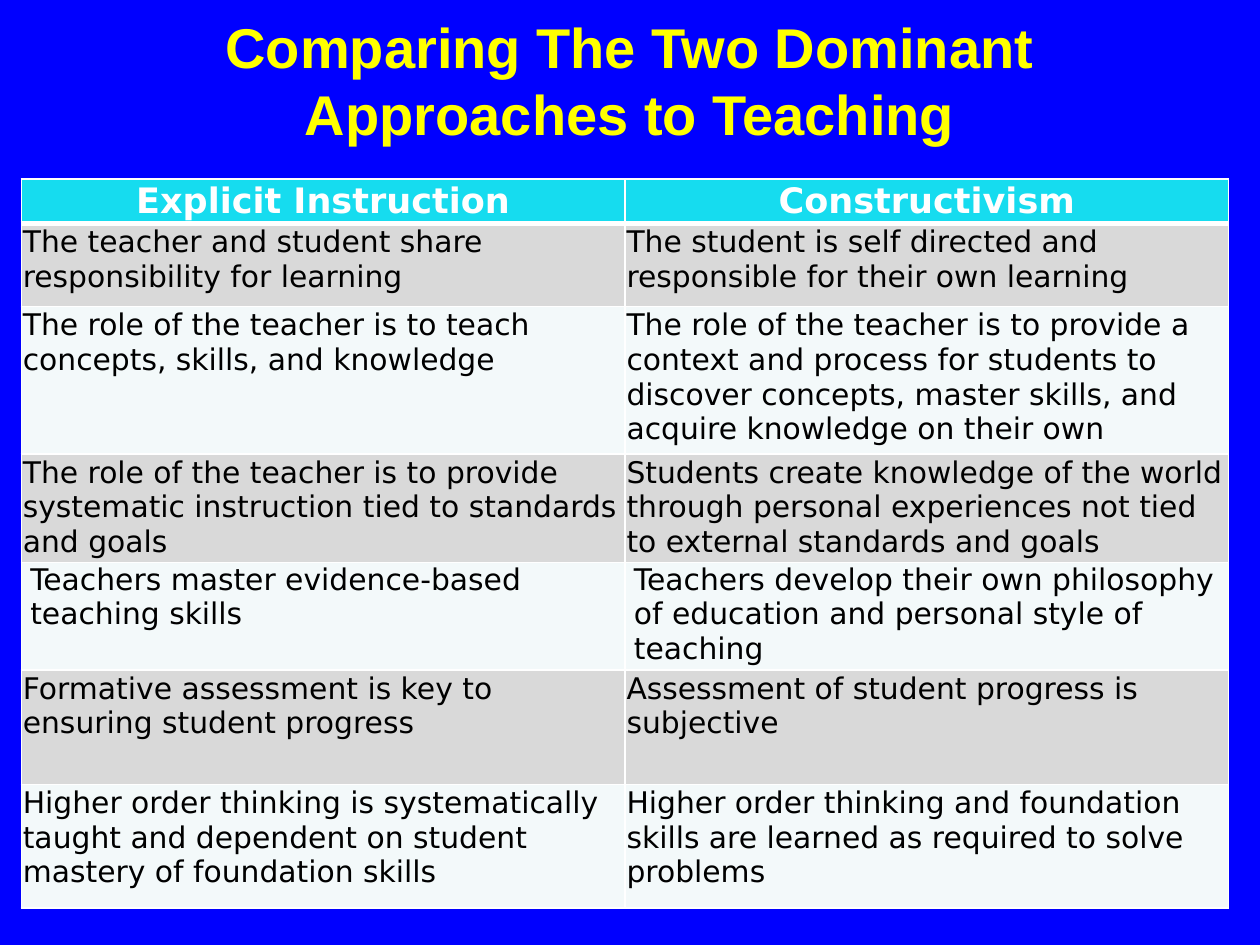
from dataclasses import dataclass

from lxml.etree import SubElement
from pptx import Presentation
from pptx.dml.color import RGBColor as RGB
from pptx.enum.text import MSO_ANCHOR as Anchor, PP_ALIGN as Align
from pptx.oxml.ns import qn
from pptx.util import Cm, Pt


@dataclass(frozen=True)
class Theme:
    back: str = "0000FF"
    title: str = "FFFF00"
    head: str = "16DCEF"
    white: str = "FFFFFF"
    text: str = "000000"
    gray: str = "D9D9D9"
    pale: str = "F3F9FA"
    title_font: str = "Arial"
    font: str = "DejaVu Sans"
    title_size: int = 32
    head_size: int = 20
    size: int = 17
    thin: int = 1
    thick: int = 3


THEME = Theme()
TITLE = "Comparing The Two Dominant Approaches to Teaching"
HEADS = ("Explicit Instruction", "Constructivism")

# Row height in cm, side margin in cm, text on each side
ROWS = [
    (1.68, 0.03, "The teacher and student share responsibility for learning",
     "The student is self directed and responsible for their own learning"),
    (2.97, 0.03, "The role of the teacher is to teach concepts, skills, and knowledge",
     "The role of the teacher is to provide a context and process for students "
     "to discover concepts, master skills, and acquire knowledge on their own"),
    (2.18, 0.03, "The role of the teacher is to provide systematic instruction "
     "tied to standards and goals",
     "Students create knowledge of the world through personal experiences "
     "not tied to external standards and goals"),
    (2.16, 0.18, "Teachers master evidence-based teaching skills",
     "Teachers develop their own philosophy of education and personal style of teaching"),
    (2.31, 0.03, "Formative assessment is key to ensuring student progress",
     "Assessment of student progress is subjective"),
    (2.49, 0.03, "Higher order thinking is systematically taught and dependent on "
     "student mastery of foundation skills",
     "Higher order thinking and foundation skills are learned as required "
     "to solve problems"),
]


def style(para, font, size, color, bold=False, align=Align.LEFT):
    para.alignment = align
    face = para.font
    face.name, face.size, face.bold = font, Pt(size), bold
    face.color.rgb = RGB.from_string(color)


def add_title(slide):
    box = slide.shapes.add_textbox(Cm(1.9), Cm(0.43), Cm(21.6), Cm(2.34))
    frame = box.text_frame
    frame.word_wrap = True
    frame.vertical_anchor = Anchor.MIDDLE
    frame.text = TITLE
    style(frame.paragraphs[0], THEME.title_font, THEME.title_size,
          THEME.title, True, Align.CENTER)


def add_edges(cell, top, bottom):
    props = cell._tc.get_or_add_tcPr()
    widths = {"lnL": THEME.thin, "lnR": THEME.thin, "lnT": top, "lnB": bottom}
    for tag, width in widths.items():
        line = SubElement(props, qn(f"a:{tag}"), w=str(Pt(width)))
        fill = SubElement(line, qn("a:solidFill"))
        SubElement(fill, qn("a:srgbClr"), val=THEME.white)


def fill_cell(cell, text, color, side, top, bottom):
    cell.text = text
    cell.margin_left = cell.margin_right = Cm(side)
    # Indented rows sit flush with the top edge
    cell.margin_top = Cm(0.03 if side < 0.1 else 0)
    cell.margin_bottom = Cm(0)
    add_edges(cell, top, bottom)
    cell.fill.solid()
    cell.fill.fore_color.rgb = RGB.from_string(color)


def add_grid(slide):
    rows = [(0.89, 0.03, *HEADS)] + ROWS
    high = sum(row[0] for row in rows)
    grid = slide.shapes.add_table(len(rows), len(HEADS), Cm(0.43), Cm(3.61),
                                  Cm(24.34), Cm(high)).table
    grid.first_row = grid.horz_banding = False
    for r, (tall, side, *texts) in enumerate(rows):
        grid.rows[r].height = Cm(tall)
        color = THEME.head if r == 0 else THEME.gray if r % 2 else THEME.pale
        # A thick rule parts the heading from the body
        top = THEME.thick if r == 1 else THEME.thin
        bottom = THEME.thick if r == 0 else THEME.thin
        for c, text in enumerate(texts):
            cell = grid.cell(r, c)
            fill_cell(cell, text, color, side, top, bottom)
            para = cell.text_frame.paragraphs[0]
            if r == 0:
                style(para, THEME.font, THEME.head_size, THEME.white, True, Align.CENTER)
            else:
                style(para, THEME.font, THEME.size, THEME.text)


def main():
    deck = Presentation()
    deck.slide_width, deck.slide_height = Cm(25.4), Cm(19.05)
    slide = deck.slides.add_slide(deck.slide_layouts[6])
    back = slide.background.fill
    back.solid()
    back.fore_color.rgb = RGB.from_string(THEME.back)
    add_title(slide)
    add_grid(slide)
    deck.save("out.pptx")


if __name__ == "__main__":
    main()
